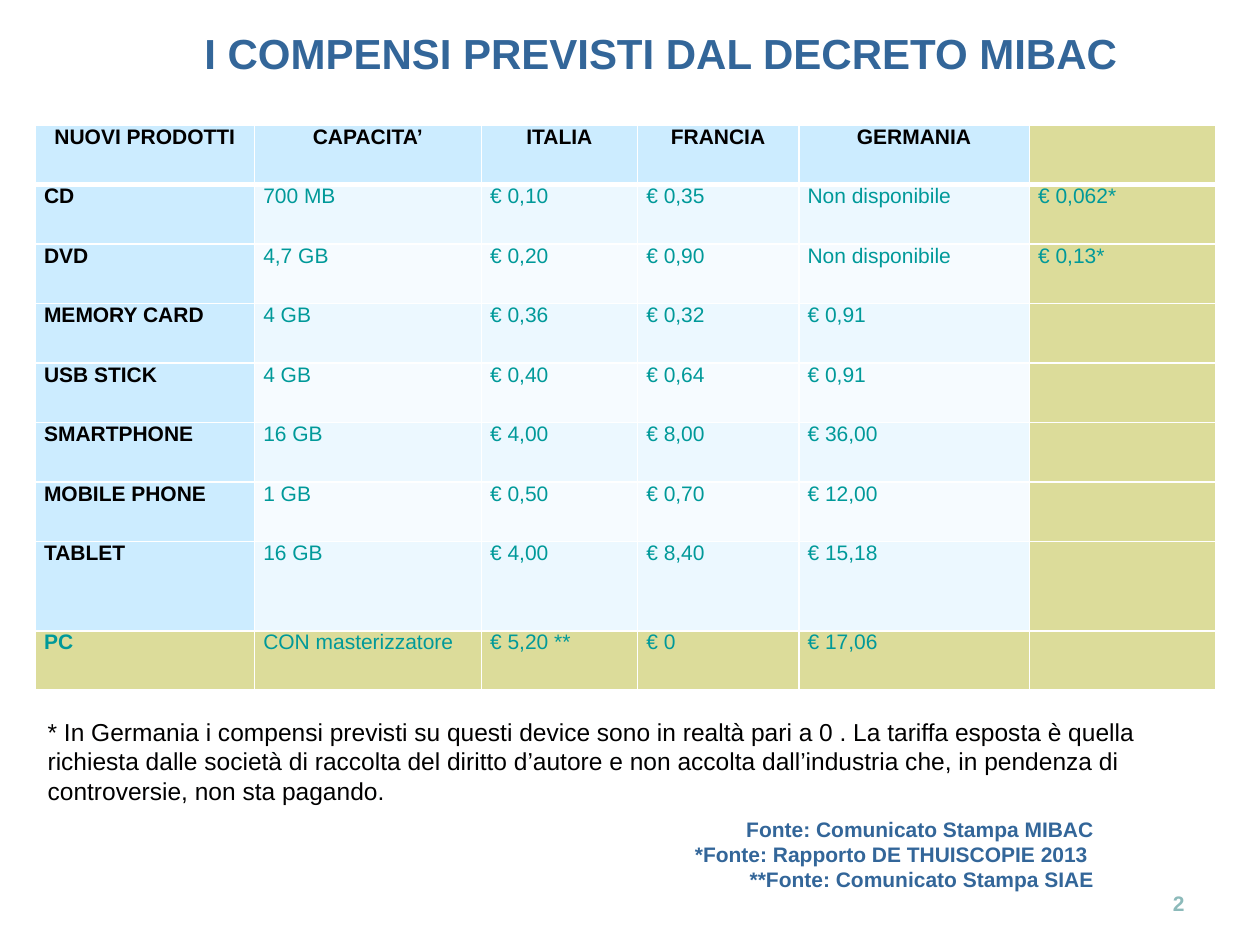
from dataclasses import dataclass

from lxml import etree
from pptx import Presentation
from pptx.dml.color import RGBColor
from pptx.enum.text import MSO_ANCHOR, PP_ALIGN
from pptx.oxml.ns import qn
from pptx.util import Inches, Pt

LEFT, CENTER, RIGHT = PP_ALIGN.LEFT, PP_ALIGN.CENTER, PP_ALIGN.RIGHT
JUSTIFY = PP_ALIGN.JUSTIFY
TOP, MIDDLE = MSO_ANCHOR.TOP, MSO_ANCHOR.MIDDLE
COLS, ROWS = 100, 75  # slide grid


@dataclass(frozen=True)
class Theme:
    font: str = "Arial"
    ink: str = "010000"
    heading: str = "336699"
    value: str = "009999"
    page: str = "8CBABA"
    label_fill: str = "CCECFF"
    bands: tuple = ("ECF8FF", "F6FBFF")
    accent_fill: str = "DCDC9A"
    border: str = "FFFFFF"
    title_size: int = 24
    note_size: int = 14
    small_size: int = 12
    thin: int = 1
    thick: int = 3


class Deck:
    """Holds the theme and the current slide; lengths are grid columns and rows."""

    def __init__(self, theme):
        self.theme = theme
        self.prs = Presentation()
        self.prs.slide_width, self.prs.slide_height = Inches(10), Inches(7.5)
        self.slide = self.prs.slides.add_slide(self.prs.slide_layouts[6])

    def x(self, cols):
        return round(self.prs.slide_width * cols / COLS)

    def y(self, rows):
        return round(self.prs.slide_height * rows / ROWS)

    def area(self, left, top, width, height):
        return self.x(left), self.y(top), self.x(width), self.y(height)

    def style(self, tf, size, color, bold, align):
        for p in tf.paragraphs:
            p.alignment = align
            for r in p.runs:
                r.font.name = self.theme.font
                r.font.size = Pt(size)
                r.font.bold = bold
                r.font.color.rgb = RGBColor.from_string(color)

    def text(self, text, area, size, color, bold=False, align=LEFT,
             anchor=TOP, indent=0):
        tf = self.slide.shapes.add_textbox(*self.area(*area)).text_frame
        tf.word_wrap = True
        tf.vertical_anchor = anchor
        tf.text = text
        self.style(tf, size, color, bold, align)
        if indent:
            for p in tf.paragraphs:
                pPr = p._p.get_or_add_pPr()
                pPr.set("marL", str(self.x(indent)))
                pPr.set("indent", "0")

    def borders(self, cell, top, bottom):
        tcPr = cell._tc.get_or_add_tcPr()
        thin = self.theme.thin
        for side, width in zip("LRTB", (thin, thin, top, bottom)):
            ln = etree.SubElement(tcPr, qn(f"a:ln{side}"), w=str(Pt(width)))
            fill = etree.SubElement(ln, qn("a:solidFill"))
            etree.SubElement(fill, qn("a:srgbClr"), val=self.theme.border)

    def cell_colors(self, row, col, last_row, last_col):
        """Fill and text colour of a cell, by its place in the table."""
        t = self.theme
        if row == last_row or col == last_col:
            return t.accent_fill, t.value
        if row == 0 or col == 0:
            return t.label_fill, t.ink
        return t.bands[(row - 1) % 2], t.value

    def table(self, data, left, top, widths, heights):
        t = self.theme
        area = self.area(left, top, sum(widths), sum(heights))
        table = self.slide.shapes.add_table(len(heights), len(widths), *area).table
        for column, width in zip(table.columns, widths):
            column.width = self.x(width)
        for i, (row, height) in enumerate(zip(table.rows, heights)):
            row.height = self.y(height)
            for j, cell in enumerate(row.cells):
                fill, color = self.cell_colors(i, j, len(heights) - 1, len(widths) - 1)
                self.borders(cell, t.thick if i == 1 else t.thin,
                             t.thick if i == 0 else t.thin)
                cell.fill.solid()
                cell.fill.fore_color.rgb = RGBColor.from_string(fill)
                cell.margin_left = cell.margin_right = self.x(0.7)
                cell.margin_top = cell.margin_bottom = 0
                if j < len(data[i]):
                    cell.text = data[i][j]
                self.style(cell.text_frame, t.small_size, color,
                           i == 0 or j == 0, JUSTIFY if i else CENTER)


FEES = [
    ["NUOVI PRODOTTI", "CAPACITA’", "ITALIA", "FRANCIA", "GERMANIA"],
    ["CD", "700 MB", "€ 0,10", "€ 0,35", "Non disponibile", "€ 0,062*"],
    ["DVD", "4,7 GB", "€ 0,20", "€ 0,90", "Non disponibile", "€ 0,13*"],
    ["MEMORY CARD", "4 GB", "€ 0,36", "€ 0,32", "€ 0,91"],
    ["USB STICK", "4 GB", "€ 0,40", "€ 0,64", "€ 0,91"],
    ["SMARTPHONE", "16 GB", "€ 4,00", "€ 8,00", "€ 36,00"],
    ["MOBILE PHONE", "1 GB", "€ 0,50", "€ 0,70", "€ 12,00"],
    ["TABLET", "16 GB", "€ 4,00", "€ 8,40", "€ 15,18"],
    ["PC", "CON masterizzatore", "€ 5,20 **", "€ 0", "€ 17,06"],
]
NOTE = ("* In Germania i compensi previsti su questi device sono in realtà pari a 0 . "
        "La tariffa esposta è quella richiesta dalle società di raccolta del diritto "
        "d’autore e non accolta dall’industria che, in pendenza di controversie, "
        "non sta pagando.")
SOURCES = ("Fonte: Comunicato Stampa MIBAC\n"
           "*Fonte: Rapporto DE THUISCOPIE 2013 \v**Fonte: Comunicato Stampa SIAE")


def main():
    theme = Theme()
    deck = Deck(theme)
    deck.text("I COMPENSI PREVISTI DAL DECRETO MIBAC", (1.5, 1.7, 96.9, 5),
              theme.title_size, theme.heading, True, CENTER, indent=5)
    deck.text("2", (71.7, 69.7, 23.3, 4), theme.small_size, theme.page, True,
              RIGHT, MIDDLE)
    deck.table(FEES, 2.8, 9.95, [17.4, 18, 12.4, 12.8, 18.3, 14.8],
               [4.72] * 7 + [7.1, 4.72])
    deck.text(SOURCES, (41.3, 64.3, 46.5, 7.1), theme.small_size, theme.heading,
              True, RIGHT)
    deck.text(NOTE, (2.8, 56.4, 93.7, 8.1), theme.note_size, theme.ink)
    deck.prs.save("out.pptx")


if __name__ == "__main__":
    main()
